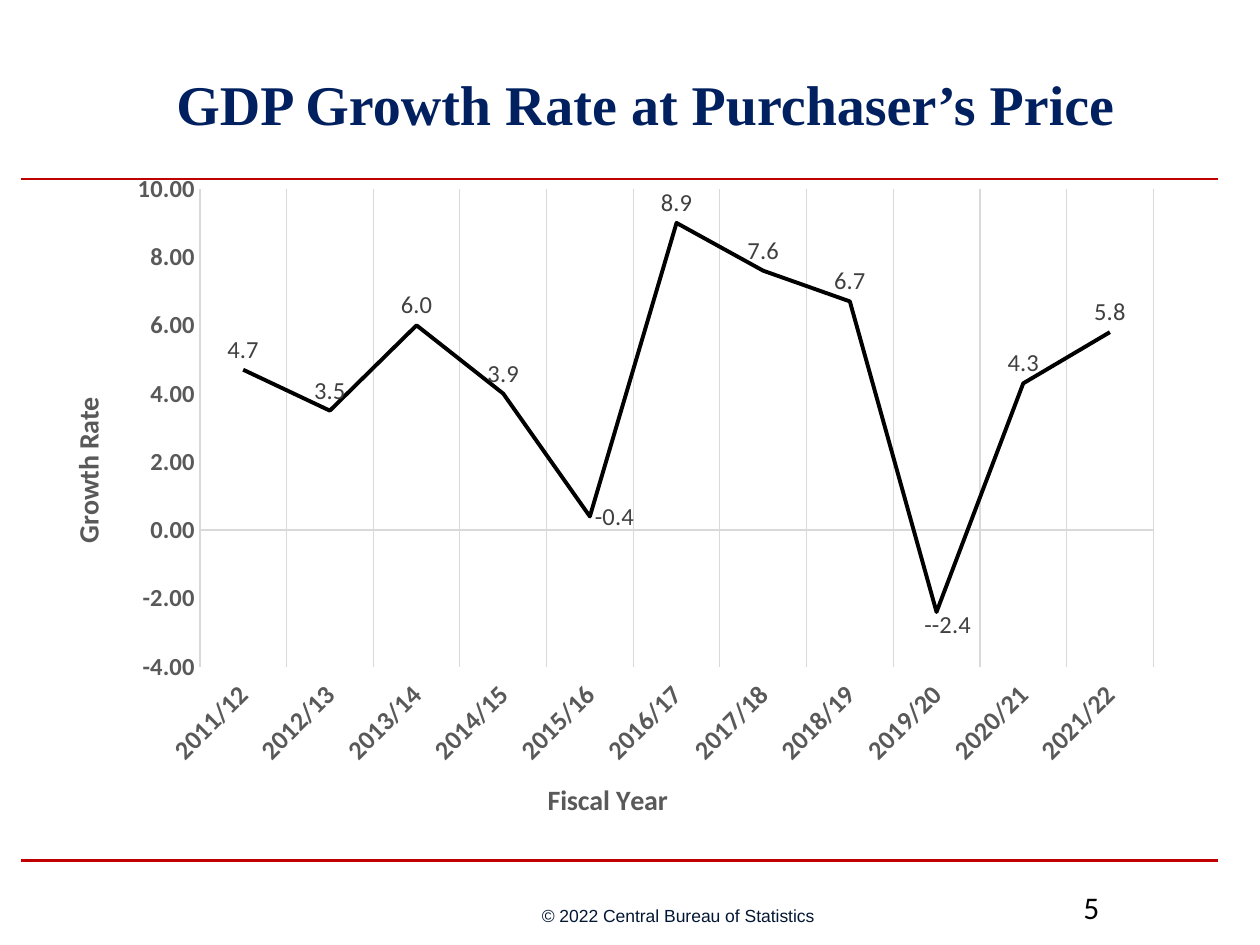
from typing import NamedTuple

from lxml import etree
from pptx import Presentation
from pptx.chart.data import CategoryChartData
from pptx.dml.color import RGBColor
from pptx.enum.chart import (XL_CHART_TYPE, XL_LABEL_POSITION, XL_TICK_LABEL_POSITION,
                             XL_TICK_MARK)
from pptx.enum.shapes import MSO_CONNECTOR
from pptx.enum.text import MSO_ANCHOR, PP_ALIGN
from pptx.oxml import parse_xml
from pptx.oxml.ns import nsdecls, qn
from pptx.util import Inches, Pt

ABOVE, BELOW, RIGHT = (XL_LABEL_POSITION.ABOVE, XL_LABEL_POSITION.BELOW,
                       XL_LABEL_POSITION.RIGHT)
LOW = XL_TICK_LABEL_POSITION.LOW
NO_TICK = XL_TICK_MARK.NONE
GRAY, PALE, BLACK = "595959", "D9D9D9", "000000"


class Year(NamedTuple):
    name: str
    rate: float
    label: str
    side: XL_LABEL_POSITION = ABOVE
    shift: tuple = ()


class Note(NamedTuple):
    text: str
    box: tuple
    face: str
    size: float
    color: str
    inset: float
    anchor: MSO_ANCHOR


YEARS = [
    Year("2011/12", 4.7, "4.7"), Year("2012/13", 3.5, "3.5"),
    Year("2013/14", 6.0, "6.0"), Year("2014/15", 4.0, "3.9"),
    Year("2015/16", 0.4, "-0.4", RIGHT), Year("2016/17", 9.0, "8.9"),
    Year("2017/18", 7.6, "7.6"), Year("2018/19", 6.7, "6.7"),
    Year("2019/20", -2.4, "--2.4", BELOW, (0.01, -0.01)), Year("2020/21", 4.3, "4.3"),
    Year("2021/22", 5.8, "5.8"),
]
NOTES = [
    Note("© 2022 Central Bureau of Statistics", (4.3, 7.17, 2.2, 0.19),
         "Arial", 10, "031735", 0, MSO_ANCHOR.MIDDLE),
    Note("5", (8.5, 7, 1.33, 0.23), "Calibri", 18, BLACK, 0.1, MSO_ANCHOR.TOP),
]


def rgb(code: str) -> RGBColor:
    return RGBColor.from_string(code)


def style(font, face: str, size: float, color: str, bold: bool = False) -> None:
    font.name, font.size, font.bold = face, Pt(size), bold
    font.color.rgb = rgb(color)


def stroke(line, color: str, width: float) -> None:
    line.color.rgb = rgb(color)
    line.width = Pt(width)


def add_rule(slide, y: float) -> None:
    rule = slide.shapes.add_connector(MSO_CONNECTOR.STRAIGHT, Inches(0.17), Inches(y),
                                      Inches(9.67), Inches(y))
    stroke(rule.line, "C00000", 1.5)
    etree.SubElement(rule._element.spPr, qn("a:effectLst"))


def add_note(slide, note: Note) -> None:
    frame = slide.shapes.add_textbox(*map(Inches, note.box)).text_frame
    frame.word_wrap = True
    frame.vertical_anchor = note.anchor
    frame.margin_left = frame.margin_right = Inches(note.inset)
    frame.margin_top = frame.margin_bottom = Inches(note.inset / 2)
    frame.text = note.text
    style(frame.paragraphs[0].runs[0].font, note.face, note.size, note.color)


def place(part, index: int, spots: tuple, mode: str = "edge", inner: bool = False) -> None:
    """Give a chart part a manual layout, in fractions of the chart."""
    for old in part.findall(qn("c:layout")):
        part.remove(old)
    target = '<c:layoutTarget val="inner"/>' if inner else ""
    modes = "".join(f'<c:{key}Mode val="{mode}"/>' for key in "xy")
    sizes = "".join(f'<c:{key} val="{val}"/>' for key, val in zip("xywh", spots))
    part.insert(index, parse_xml(f'<c:layout {nsdecls("c")}><c:manualLayout>{target}'
                                 f'{modes}{sizes}</c:manualLayout></c:layout>'))


def set_axis(axis, text: str, size: float, turn: int, spots: tuple) -> None:
    axis.major_tick_mark = axis.minor_tick_mark = NO_TICK
    style(axis.tick_labels.font, "Calibri", size, GRAY, True)
    title = axis.axis_title
    frame = title.text_frame
    frame.text = text
    style(frame.paragraphs[0].runs[0].font, "Calibri", 16, GRAY, True)
    body = frame._txBody.find(qn("a:bodyPr"))
    body.set("rot", str(turn * 60000))
    body.set("vert", "horz")
    place(title._element, 1, spots)


def add_graph(slide) -> None:
    data = CategoryChartData(number_format="0.00")
    data.categories = [year.name for year in YEARS]
    data.add_series("Series 1", [year.rate for year in YEARS])
    chart = slide.shapes.add_chart(XL_CHART_TYPE.LINE_STACKED, Inches(0.5), Inches(1.34),
                                   Inches(8.83), Inches(5.29), data).chart
    chart.has_legend = chart.has_title = False
    style(chart.font, "Calibri", 10, BLACK)
    place(chart._chartSpace.chart.plotArea, 0, (0.123, 0.03, 0.857, 0.717), inner=True)

    # Axes
    cat, val = chart.category_axis, chart.value_axis
    set_axis(cat, "Fiscal Year", 15, 0, (0.431, 0.91))
    set_axis(val, "Growth Rate", 14, -90, (0.001, 0.335))
    cat.tick_label_position = LOW
    cat._element.find(qn("c:txPr")).find(qn("a:bodyPr")).set("rot", str(-45 * 60000))
    cat.has_major_gridlines = True
    for line in (cat.format.line, cat.major_gridlines.format.line):
        stroke(line, PALE, 0.75)
    val.has_major_gridlines = False
    val.minimum_scale, val.maximum_scale, val.major_unit = -4, 10, 2
    val.tick_labels.number_format = "0.00"
    val.tick_labels.number_format_is_linked = False
    val.format.line.fill.background()

    # Line and point labels
    plot = chart.plots[0]
    plot.vary_by_categories = False
    series = plot.series[0]
    series.smooth = False
    stroke(series.format.line, BLACK, 2.25)
    for num, year in enumerate(YEARS):
        label = series.points[num].data_label
        label.text_frame.text = year.label
        style(label.text_frame.paragraphs[0].runs[0].font, "Calibri", 14, "404040")
        label.position = year.side
        if year.shift:
            place(series.data_labels._element.dLbl_lst[num], 1, year.shift, "factor")


def main() -> None:
    deck = Presentation()
    deck.slide_width, deck.slide_height = Inches(10), Inches(7.5)
    slide = deck.slides.add_slide(deck.slide_layouts[5])

    # Title
    title = slide.shapes.title
    title.left, title.top, title.width, title.height = map(Inches, (0.75, 0.3, 8.75, 1.03))
    frame = title.text_frame
    frame.text = "GDP Growth Rate at Purchaser’s Price"
    frame.vertical_anchor = MSO_ANCHOR.MIDDLE
    frame.paragraphs[0].alignment = PP_ALIGN.CENTER
    style(frame.paragraphs[0].runs[0].font, "Times New Roman", 32, "002060", True)

    # Rules, chart and footer
    for y in (1.42, 6.83):
        add_rule(slide, y)
    add_graph(slide)
    for note in NOTES:
        add_note(slide, note)
    deck.save("out.pptx")


if __name__ == "__main__":
    main()
